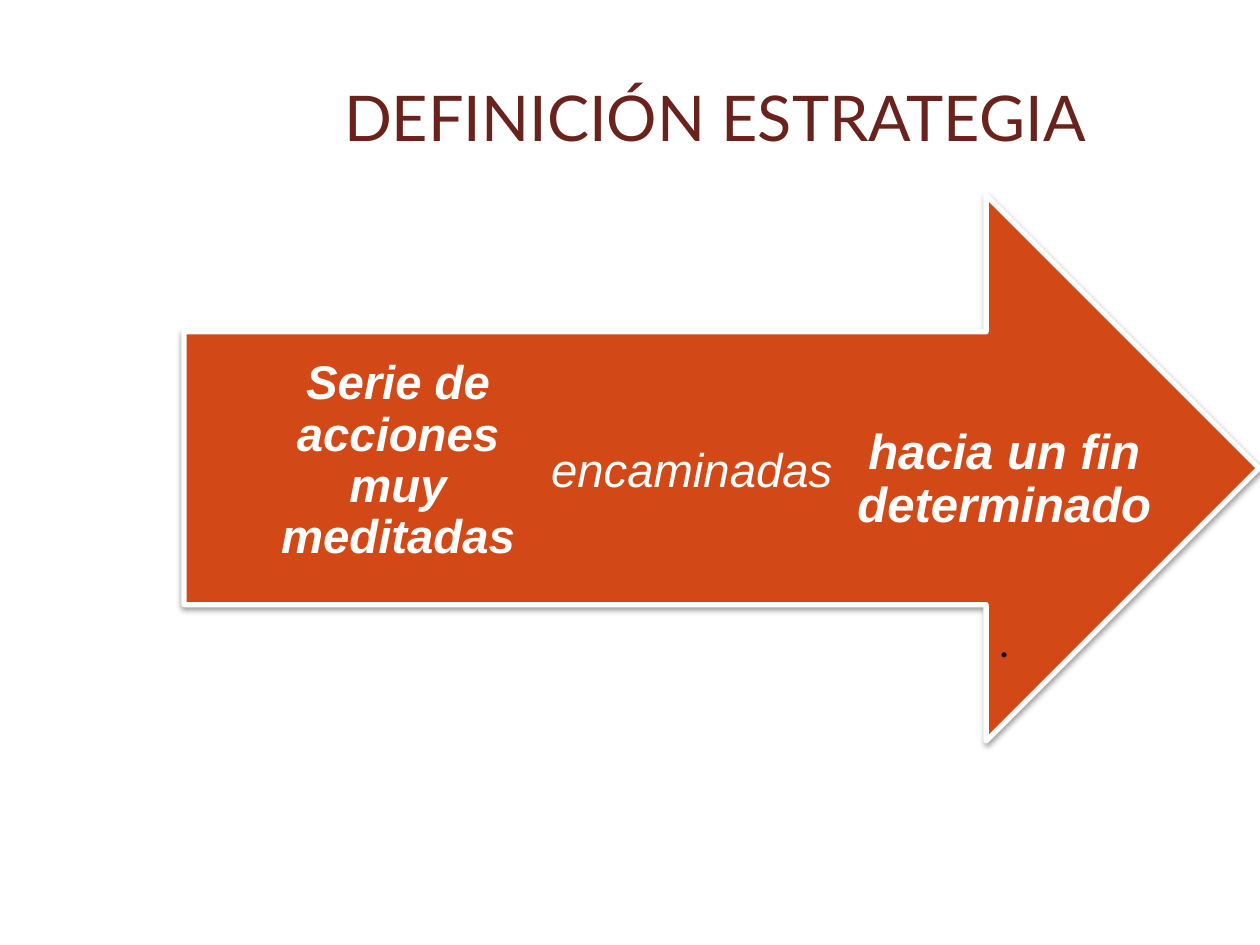
from lxml import etree
from pptx import Presentation
from pptx import util as u
from pptx.dml.color import RGBColor
from pptx.enum import shapes, text
from pptx.oxml import ns

MAROON = RGBColor(0x6A, 0x22, 0x1D)
ORANGE = RGBColor(0xD3, 0x48, 0x17)
WHITE = RGBColor(0xFF, 0xFF, 0xFF)
BLACK = RGBColor(0x00, 0x00, 0x00)

STEPS = [
    ("Serie de acciones muy meditadas", 1.75, 5.13, 5.08, 27, True),
    ("encaminadas", 7.26, 5.95, 5.51, 27, False),
    ("hacia un fin determinado", 13.56, 5.95, 8.53, 28, True),
]


def write(para, words, font="Arial", size=27, color=WHITE, bold=False,
          italic=False, spacing=1.0, before=0):
    para.alignment = text.PP_ALIGN.CENTER
    para.line_spacing = spacing
    para.space_before = u.Pt(before)
    span = para.add_run()
    span.text = words
    span.font.name = font
    span.font.size = u.Pt(size)
    span.font.color.rgb = color
    span.font.bold = bold
    span.font.italic = italic


def add_shadow(shape):
    shape.shadow.inherit = False
    effects = shape._element.spPr.find(ns.qn("a:effectLst"))
    shadow = etree.SubElement(
        effects, ns.qn("a:outerShdw"), blurRad=str(u.Pt(3.1)),
        dist=str(u.Pt(1.6)), dir="5400000", rotWithShape="0")
    color = etree.SubElement(shadow, ns.qn("a:srgbClr"), val="000000")
    etree.SubElement(color, ns.qn("a:alpha"), val="38000")


def place_title(page, left, top, width, height):
    title = page.shapes.title
    title.left, title.top = u.Cm(left), u.Cm(top)
    title.width, title.height = u.Cm(width), u.Cm(height)
    title.text_frame.vertical_anchor = text.MSO_ANCHOR.MIDDLE
    write(title.text_frame.paragraphs[0], "DEFINICIÓN ESTRATEGIA",
          font="Lato", size=36, color=MAROON)


def add_step(page, left, top, width, height):
    box = page.shapes.add_textbox(u.Cm(left), u.Cm(top), u.Cm(width), u.Cm(height))
    frame = box.text_frame
    frame.word_wrap = True
    frame.vertical_anchor = text.MSO_ANCHOR.MIDDLE
    frame.margin_left = frame.margin_right = 0
    frame.margin_top = frame.margin_bottom = u.Cm(0.76)
    return frame


def add_strategy_arrow(page, left, top, width, height):
    arrow = page.shapes.add_shape(
        shapes.MSO_SHAPE.RIGHT_ARROW,
        u.Cm(left), u.Cm(top), u.Cm(width), u.Cm(height))
    arrow.fill.solid()
    arrow.fill.fore_color.rgb = ORANGE
    arrow.line.color.rgb = WHITE
    arrow.line.width = u.Pt(3)
    etree.SubElement(arrow.line._get_or_add_ln(), ns.qn("a:round"))
    add_shadow(arrow)

    for words, offset, step_width, step_height, size, bold in STEPS:
        frame = add_step(page, left + offset, top + 2.82, step_width, step_height)
        write(frame.paragraphs[0], words, size=size, bold=bold,
              italic=True, spacing=0.9)
    write(frame.add_paragraph(), ".", font="Calibri", size=24,
          color=BLACK, spacing=0.9, before=50)


def main():
    deck = Presentation()
    deck.slide_width, deck.slide_height = u.Cm(25.4), u.Cm(19.05)
    page = deck.slides.add_slide(deck.slide_layouts[5])
    place_title(page, 4.7, 0.76, 19.43, 3.18)
    add_strategy_arrow(page, 3.71, 3.94, 21.67, 11)
    deck.save("out.pptx")


if __name__ == "__main__":
    main()
